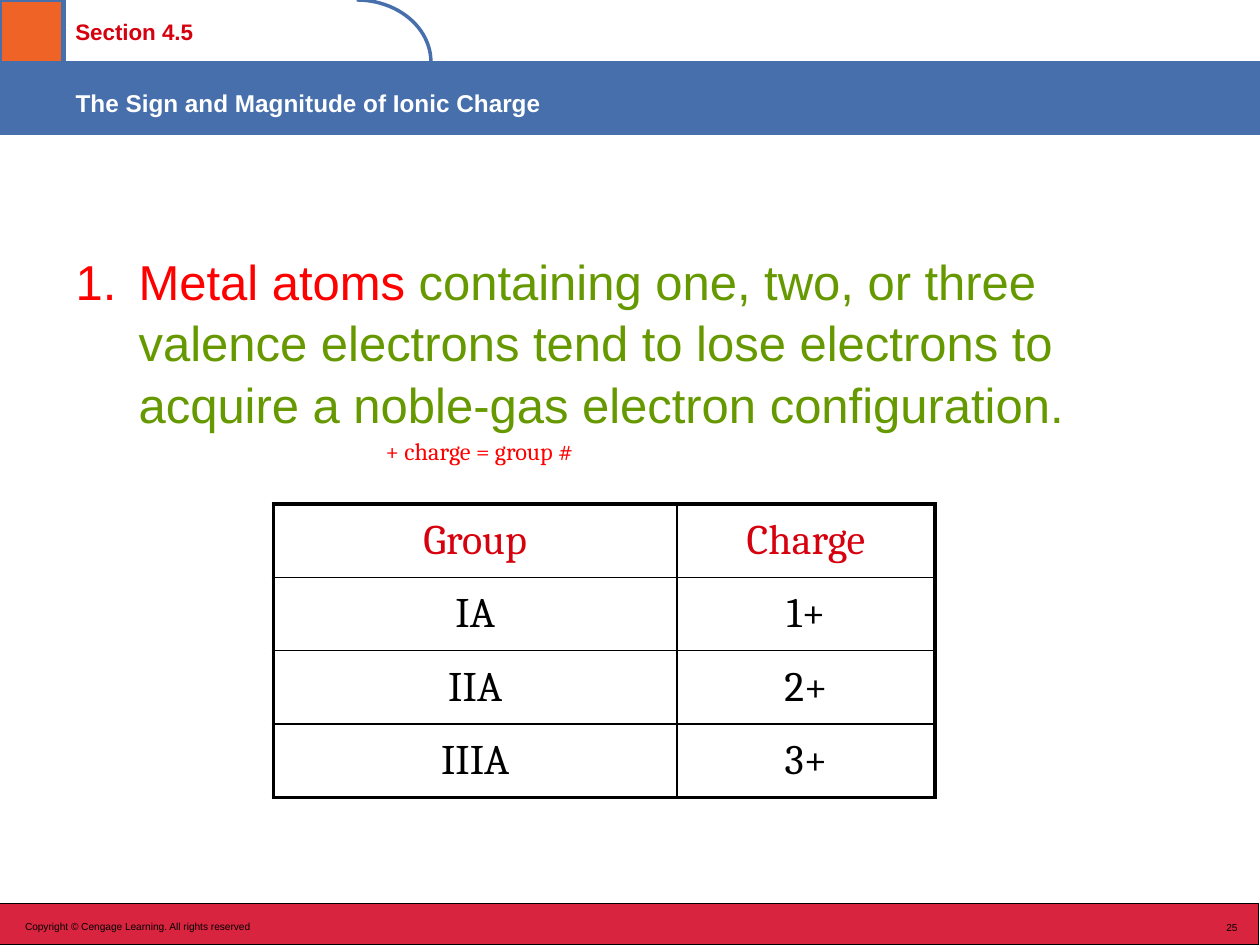
import math
import lxml.etree
import pptx
import pptx.util
from pptx.dml.color import RGBColor
from pptx.enum.shapes import MSO_SHAPE
from pptx.enum.text import MSO_ANCHOR, MSO_AUTO_SIZE, PP_ALIGN
from pptx.oxml.ns import qn

BLUE = RGBColor(0x47, 0x6F, 0xAC)
ORANGE = RGBColor(0xF0, 0x63, 0x26)
CRIMSON = RGBColor(0xD9, 0x24, 0x40)
DARK_RED = RGBColor(0xD6, 0x00, 0x0E)
RED = RGBColor(0xFF, 0x00, 0x00)
GREEN = RGBColor(0x66, 0x99, 0x00)
BLACK = RGBColor(0x00, 0x00, 0x00)
WHITE = RGBColor(0xFF, 0xFF, 0xFF)

CELL = pptx.util.Inches(0.5)
COLS, ROWS = 20, 15


def grid(*values):
    """Turn columns and rows of the slide grid into lengths."""
    return [round(v * CELL) for v in values]


def add_run(p, text, size, color, font="Arial", bold=False, raised=0):
    """Add a run; raised is the superscript offset in percent."""
    r = p.add_run()
    r.text = text
    r.font.size = pptx.util.Pt(size)
    r.font.name = font
    r.font.bold = bold
    r.font.color.rgb = color
    if raised:
        r.font._element.set("baseline", str(raised * 1000))


def add_block(s, box, fill, line, width):
    sp = s.shapes.add_shape(MSO_SHAPE.RECTANGLE, *grid(*box))
    sp.shadow.inherit = False
    sp.fill.solid()
    sp.fill.fore_color.rgb = fill
    sp.line.color.rgb = line
    sp.line.width = pptx.util.Pt(width)


def add_label(s, box, text, size, color, align=PP_ALIGN.LEFT, wrap=True, **style):
    tf = s.shapes.add_textbox(*grid(*box)).text_frame
    tf.word_wrap = wrap
    p = tf.paragraphs[0]
    p.alignment = align
    add_run(p, text, size, color, **style)


def place(sp, box):
    """Move a placeholder to a box and in front of what is drawn so far."""
    sp.left, sp.top, sp.width, sp.height = grid(*box)
    tree = sp._element.getparent()
    tree.append(sp._element)
    tf = sp.text_frame
    tf.word_wrap = True
    tf.auto_size = MSO_AUTO_SIZE.NONE
    return tf


def add_tab_curve(s, box):
    """Draw the quarter ellipse that closes the section tab."""
    x, y, w, h = grid(*box)
    steps = 24
    angles = [math.pi / 2 * i / steps for i in range(steps + 1)]
    points = [(x + w * math.sin(a), y + h * (1 - math.cos(a))) for a in angles]
    builder = s.shapes.build_freeform(*points[0])
    builder.add_line_segments(points[1:], close=False)
    sp = builder.convert_to_shape()
    sp.shadow.inherit = False
    sp.fill.background()
    sp.line.color.rgb = BLUE
    sp.line.width = pptx.util.Pt(2)


def add_header(s, box, section, title):
    x, y, w, h = box
    tab = h * 0.46
    add_block(s, (x, y + tab, w, h - tab), BLUE, BLUE, 0.75)
    add_label(s, (x + 1, y + 0.06, 5.7, 0.94), section, 22, DARK_RED,
              bold=True, raised=20)
    add_tab_curve(s, (x + 5.66, y, 1.18, tab))
    add_block(s, (x + 0.02, y, 1, 1), BLUE, BLUE, 2)
    add_block(s, (x, y, 1, 1), ORANGE, BLUE, 2)
    tf = place(s.shapes.title, (x + 1, y + 1.16, w - 1, 1))
    tf.vertical_anchor = MSO_ANCHOR.MIDDLE
    p = tf.paragraphs[0]
    p.alignment = PP_ALIGN.LEFT
    add_run(p, title, 24, WHITE, bold=True, raised=20)


def add_footer(s, box, notice, number):
    x, y, w, h = box
    add_block(s, box, CRIMSON, BLACK, 0.75)
    add_label(s, (x + 0.22, y + 0.14, 12.84, 0.5), notice, 10, BLACK, raised=30)
    add_label(s, (x + w - 5.48, y + 0.16, 5.34, 0.5), number, 10, BLACK,
              align=PP_ALIGN.RIGHT, raised=30)


def add_numbered_point(s, box, parts):
    p = place(s.placeholders[1], box).paragraphs[0]
    pPr = p._p.get_or_add_pPr()
    indent = CELL
    pPr.set("marL", str(indent))
    pPr.set("indent", str(-indent))
    lxml.etree.SubElement(pPr, qn("a:buFont"), typeface="Arial")
    lxml.etree.SubElement(pPr, qn("a:buAutoNum"), type="arabicPeriod")
    p.space_before = pptx.util.Pt(0)
    p.line_spacing = 1.05
    for text, color in parts:
        add_run(p, text, 28, color)


def set_borders(cell, widths):
    tcPr = cell._tc.get_or_add_tcPr()
    for i, (side, width) in enumerate(widths.items()):
        ln = lxml.etree.Element(qn("a:ln" + side), w=str(pptx.util.Pt(width)))
        fill = lxml.etree.SubElement(ln, qn("a:solidFill"))
        lxml.etree.SubElement(fill, qn("a:srgbClr"), val=str(BLACK))
        tcPr.insert(i, ln)


def add_charge_table(s, box, rows, shares):
    thick, thin = 2.25, 1
    last_row, last_col = len(rows) - 1, len(shares) - 1
    table = s.shapes.add_table(len(rows), len(shares), *grid(*box)).table
    table.horz_banding = False
    for column, share in zip(table.columns, shares):
        column.width = grid(box[2] * share)[0]
    for i, row in enumerate(rows):
        for j, text in enumerate(row):
            cell = table.cell(i, j)
            cell.fill.background()
            cell.vertical_anchor = MSO_ANCHOR.MIDDLE
            p = cell.text_frame.paragraphs[0]
            p.alignment = PP_ALIGN.CENTER
            add_run(p, text, 24, BLACK if i else DARK_RED, font="Cambria")
            set_borders(cell, {
                "L": thin if j else thick,
                "R": thick if j == last_col else thin,
                "T": thin if i else thick,
                "B": thick if i == last_row else thin,
            })


def main():
    prs = pptx.Presentation()
    prs.slide_width, prs.slide_height = grid(COLS, ROWS)
    s = prs.slides.add_slide(prs.slide_layouts[1])
    add_footer(s, (-0.02, 14.34, COLS, 0.66),
               "Copyright © Cengage Learning. All rights reserved", "25")
    add_header(s, (0, 0, COLS, 2.14), "Section 4.5",
               "The Sign and Magnitude of Ionic Charge")
    add_numbered_point(s, (1, 3.84, 18, 3), [
        ("Metal atoms ", RED),
        ("containing one, two, or three valence electrons tend to lose "
         "electrons to acquire a noble-gas electron configuration.", GREEN),
    ])
    add_charge_table(s, (4.34, 8, 10.5, 4.66), [
        ("Group", "Charge"),
        ("IA", "1+"),
        ("IIA", "2+"),
        ("IIIA", "3+"),
    ], (0.61, 0.39))
    add_label(s, (5.84, 6.74, 5.68, 1), " + charge = group #", 24, RED,
              wrap=False, font="Cambria", raised=30)
    prs.save("out.pptx")


if __name__ == "__main__":
    main()
